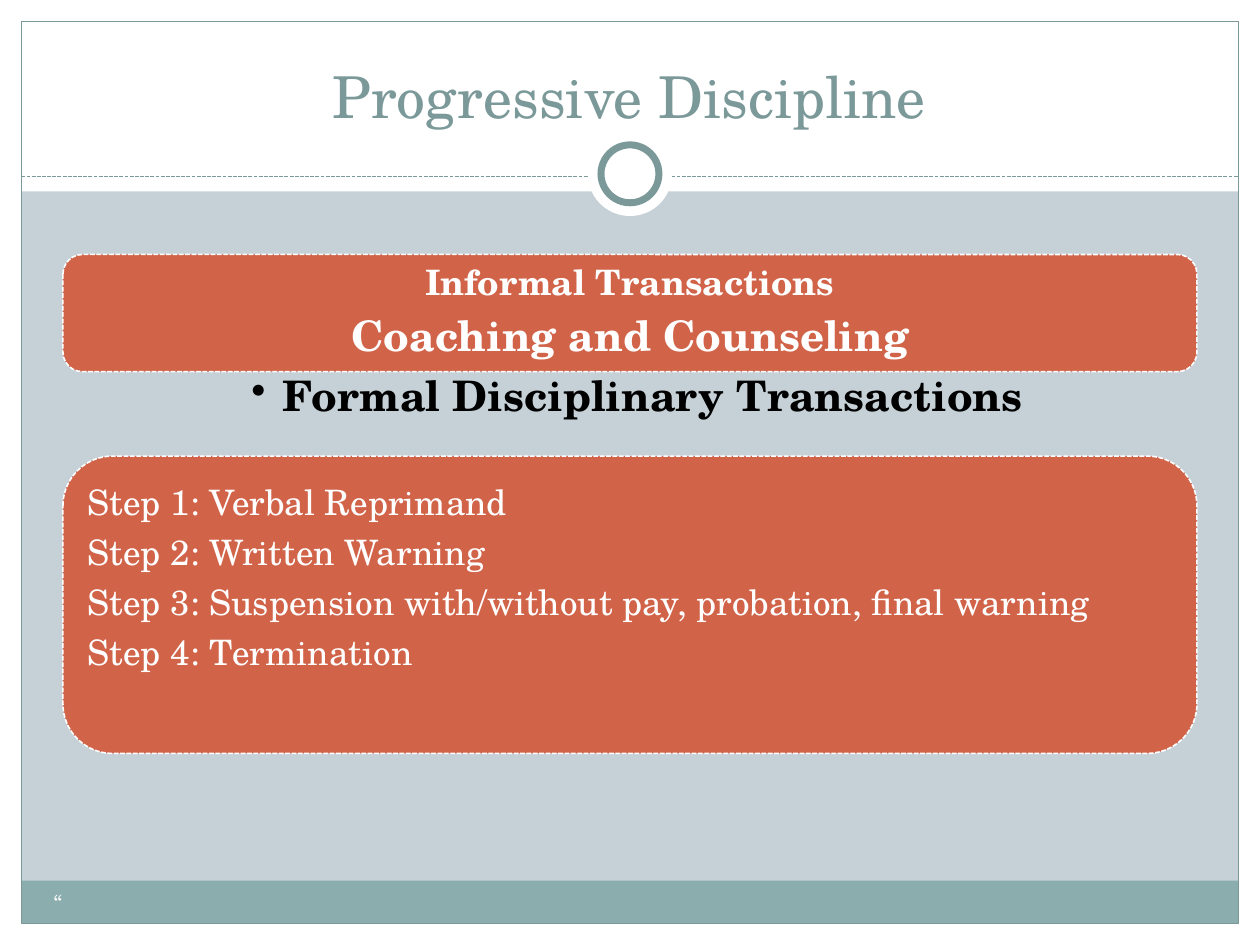
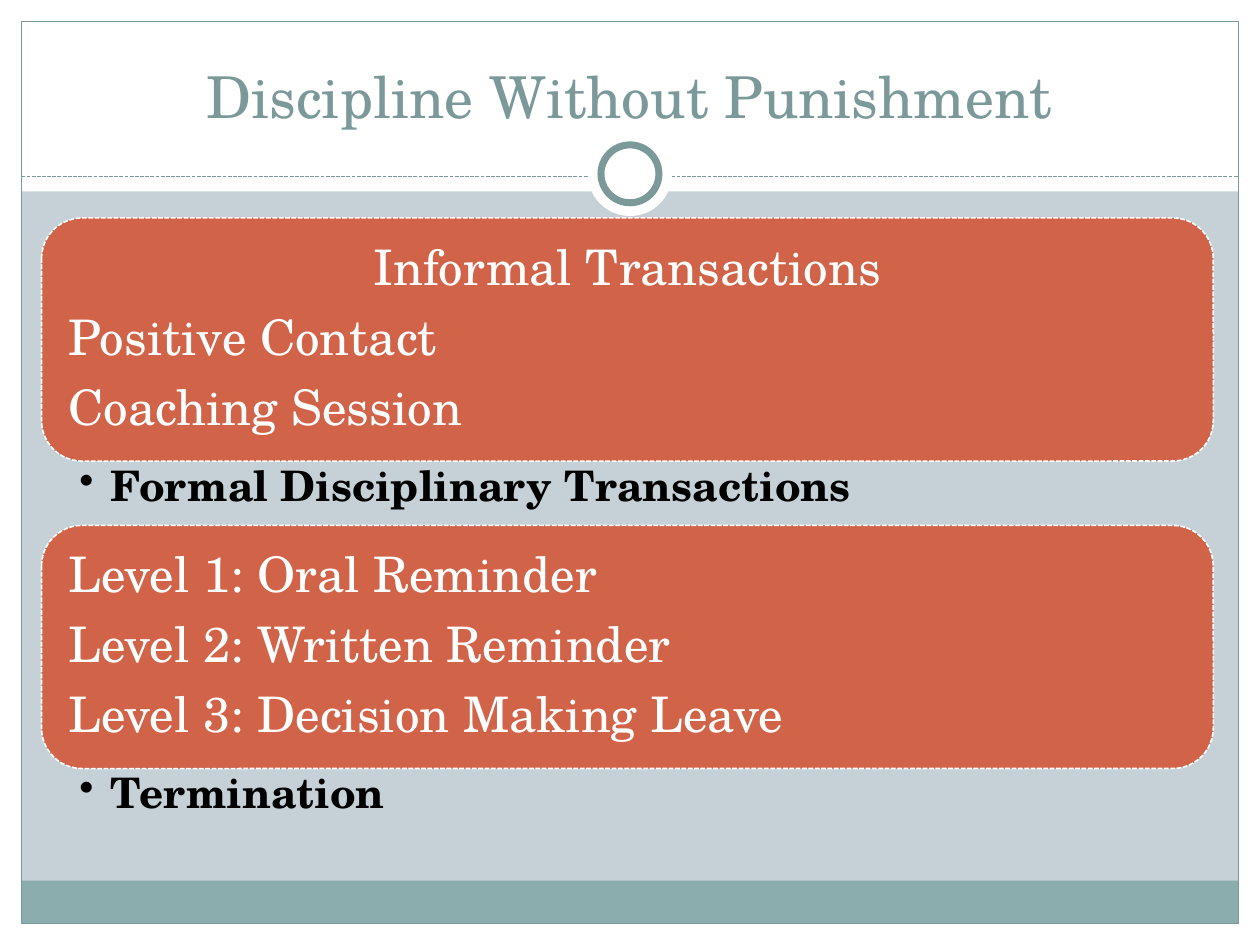
from lxml.etree import SubElement
from pptx import Presentation
from pptx.dml.color import RGBColor
from pptx.enum.dml import MSO_LINE
from pptx.enum.shapes import MSO_CONNECTOR, MSO_SHAPE
from pptx.enum.text import MSO_ANCHOR, PP_ALIGN
from pptx.oxml.ns import qn
from pptx.util import Inches, Pt

FONT = "TeX Gyre Schola"
WHITE, BLACK = "FFFFFF", "000000"
BACK, BAND, EDGE, CARD = "C5D1D7", "8CADAE", "7C999A", "D16349"
WIDE, HIGH, RIM = 10, 7.5, 0.17
LEFT, MID = PP_ALIGN.LEFT, PP_ALIGN.CENTER


def color(code):
    return RGBColor.from_string(code)


def draw(slide, kind, box, fill=None, line=None, width=0.75):
    shape = slide.shapes.add_shape(kind, *map(Inches, box))
    shape.shadow.inherit = False
    if fill:
        shape.fill.solid()
        shape.fill.fore_color.rgb = color(fill)
    else:
        shape.fill.background()
    if line:
        shape.line.color.rgb = color(line)
        shape.line.width = Pt(width)
    else:
        shape.line.fill.background()
    return shape


def set_frame(shape, anchor, pads=(0.1, 0.05, 0.1, 0.05)):
    frame = shape.text_frame
    frame.word_wrap = True
    frame.vertical_anchor = anchor
    (frame.margin_left, frame.margin_top,
     frame.margin_right, frame.margin_bottom) = map(Inches, pads)
    return frame


def add_box(slide, box, anchor=MSO_ANCHOR.TOP, **pads):
    return set_frame(slide.shapes.add_textbox(*map(Inches, box)), anchor, **pads)


def write(para, text, size, tint, bold=False, align=LEFT):
    para.alignment = align
    run = para.add_run()
    run.text = text
    font = run.font
    font.name, font.size, font.bold = FONT, Pt(size), bold
    font.color.rgb = color(tint)


def space(para, size, share):
    """Tighten the lines; leave a share of the text size below."""
    para.line_spacing = 0.9
    para.space_after = Pt(round(size * share, 1))


def add_card(slide, box, lines, pad, bold=False, spare=0):
    """Rounded card; each line is (text, size, align)."""
    card = draw(slide, MSO_SHAPE.ROUNDED_RECTANGLE, box, CARD, WHITE, 0.9)
    card.line.dash_style = MSO_LINE.SQUARE_DOT
    frame = set_frame(card, MSO_ANCHOR.MIDDLE, (pad, pad, pad, pad + spare))
    for i, (text, size, align) in enumerate(lines):
        para = frame.add_paragraph() if i else frame.paragraphs[0]
        space(para, size, 0.35)
        write(para, text, size, WHITE, bold, align)


def add_note(slide, box, text, align=LEFT):
    """Bold bulleted line below a card."""
    para = add_box(slide, box, pads=(0.3, 0.03, 0.19, 0.03)).paragraphs[0]
    space(para, 24, 0.2)
    write(para, text, 24, BLACK, True, align)
    props = para._p.get_or_add_pPr()
    props.set("marL", str(Inches(0.25)))
    props.set("indent", str(Inches(-0.25)))
    SubElement(props, qn("a:buChar")).set("char", "•")


def add_rule(slide, y):
    rule = slide.shapes.add_connector(
        MSO_CONNECTOR.STRAIGHT, *map(Inches, (RIM, y, WIDE - RIM, y)))
    rule.line.color.rgb = color(EDGE)
    rule.line.width = Pt(0.75)
    rule.line.dash_style = MSO_LINE.SQUARE_DOT
    SubElement(rule._element.spPr, qn("a:effectLst"))


def add_ring(slide, x, y):
    """Ring centred on x, y above a white disc."""
    for size, line in ((0.67, None), (0.46, EDGE)):
        box = (x - size / 2, y - size / 2, size, size)
        draw(slide, MSO_SHAPE.OVAL, box, WHITE, line, 4)


def new_slide(deck, title):
    slide = deck.slides.add_slide(deck.slide_layouts[6])
    slide.background.fill.solid()
    slide.background.fill.fore_color.rgb = color(BACK)
    inner = WIDE - 2 * RIM
    rims = [(0, HIGH - RIM, WIDE, RIM), (0, 0, WIDE, 1.52),
            (0, 0, RIM, HIGH), (WIDE - RIM, 0, RIM, HIGH)]
    for rim in rims:
        draw(slide, MSO_SHAPE.RECTANGLE, rim, WHITE)
    draw(slide, MSO_SHAPE.RECTANGLE, (RIM, 6.99, inner, 0.34), BAND)
    draw(slide, MSO_SHAPE.RECTANGLE, (RIM, RIM, inner, HIGH - 2 * RIM), line=EDGE)
    add_rule(slide, 1.4)
    add_ring(slide, WIDE / 2, 1.38)
    head = add_box(slide, (0.33, 0.25, 9.33, 0.83), MSO_ANCHOR.BOTTOM)
    write(head.paragraphs[0], title, 33, EDGE, align=MID)
    return slide


def add_steps(deck):
    slide = new_slide(deck, "Progressive Discipline")
    foot = add_box(slide, (0.33, 7.01, 3.92, 0.4))
    write(foot.paragraphs[0], "“", 12, WHITE)
    x, wide = 0.5, 9
    add_card(slide, (x, 2.02, wide, 0.93),
             [("Informal Transactions", 20, MID),
              ("Coaching and Counseling", 24, MID)], 0.08, bold=True)
    add_note(slide, (x, 2.95, wide, 0.42), "Formal Disciplinary Transactions", MID)
    steps = ["Verbal Reprimand", "Written Warning",
             "Suspension with/without pay, probation, final warning", "Termination"]
    lines = [(f"Step {i}: {step}", 20, LEFT) for i, step in enumerate(steps, 1)]
    add_card(slide, (x, 3.62, wide, 2.36), lines, 0.08, spare=0.4)


def add_levels(deck):
    slide = new_slide(deck, "Discipline Without Punishment")
    x, y, wide, tall, low = 0.33, 1.73, 9.3, 1.93, 0.51
    levels = ["Oral Reminder", "Written Reminder", "Decision Making Leave"]
    parts = [
        ([("Informal Transactions", 28, MID), ("Positive Contact", 28, LEFT),
          ("Coaching Session", 28, LEFT)], "Formal Disciplinary Transactions"),
        ([(f"Level {i}: {level}", 28, LEFT) for i, level in enumerate(levels, 1)],
         "Termination"),
    ]
    for i, (lines, note) in enumerate(parts):
        top = y + i * (tall + low)
        add_card(slide, (x, top, wide, tall), lines, 0.12)
        add_note(slide, (x, top + tall, wide, low), note)


def main():
    deck = Presentation()
    deck.slide_width, deck.slide_height = Inches(WIDE), Inches(HIGH)
    add_steps(deck)
    add_levels(deck)
    deck.save("out.pptx")


if __name__ == "__main__":
    main()
